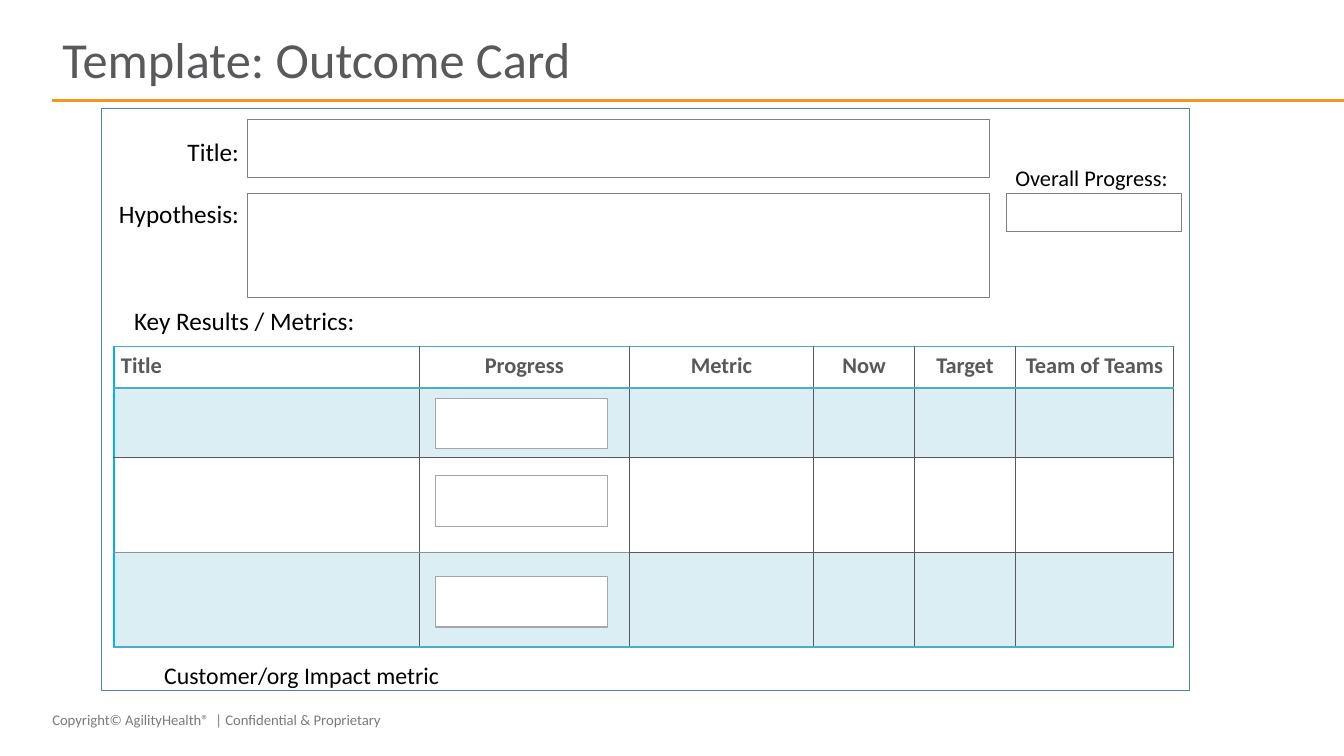
from dataclasses import dataclass

from lxml import etree
from pptx import Presentation
from pptx import util as u
from pptx.dml import color
from pptx.enum import shapes, text
from pptx.oxml import ns

WIDTH, HEIGHT = u.Inches(13.33), u.Inches(7.5)


@dataclass(frozen=True)
class Theme:
    font: str = "Calibri"
    heading: str = "58595B"
    ink: str = "000000"
    muted: str = "7A7A7A"
    accent: str = "F7941C"
    paper: str = "FFFFFF"
    card: str = "4B7EBC"
    field: str = "808080"
    progress: str = "A6A6A6"
    teal: str = "4BACC6"
    sky: str = "00B0F0"
    grid: str = "595959"
    soft_grid: str = "8C929A"
    title_size: float = 36
    label_size: float = 18
    note_size: float = 17
    small_size: float = 16
    footer_size: float = 10.5


THEME = Theme()
ALIGN = text.PP_ALIGN


def rgb(value):
    return color.RGBColor.from_string(value)


def area(left, top, width, height):
    """Turn percentages of the slide's size into lengths."""
    return [int(share * side / 100) for share, side in
            ((left, WIDTH), (top, HEIGHT), (width, WIDTH), (height, HEIGHT))]


def write(frame, words, size, ink, align=ALIGN.LEFT, bold=False):
    frame.text = words
    para = frame.paragraphs[0]
    para.alignment = align
    for span in para.runs:
        span.font.name = THEME.font
        span.font.size = u.Pt(size)
        span.font.bold = bold
        span.font.color.rgb = rgb(ink)
    return para


def add_title(page, words, *place):
    title = page.shapes.title
    title.left, title.top, title.width, title.height = area(*place)
    frame = title.text_frame
    frame.auto_size = text.MSO_AUTO_SIZE.NONE
    frame.vertical_anchor = text.MSO_ANCHOR.MIDDLE
    para = write(frame, words, THEME.title_size, THEME.heading)
    para.line_spacing = 0.9


def add_label(page, words, place, size=THEME.label_size, ink=THEME.ink,
              align=ALIGN.LEFT, wrap=True, inset=0.09):
    frame = page.shapes.add_textbox(*area(*place)).text_frame
    frame.word_wrap = wrap
    frame.auto_size = text.MSO_AUTO_SIZE.SHAPE_TO_FIT_TEXT
    frame.margin_left = frame.margin_right = u.Inches(inset)
    frame.margin_top = frame.margin_bottom = u.Inches(inset / 2)
    write(frame, words, size, ink, align)


def add_box(page, place, line, fill=None):
    box = page.shapes.add_shape(shapes.MSO_SHAPE.RECTANGLE, *area(*place))
    box.shadow.inherit = False
    box.line.color.rgb = rgb(line)
    box.line.width = u.Pt(0.75)
    if fill:
        box.fill.solid()
        box.fill.fore_color.rgb = rgb(fill)
    else:
        box.fill.background()


def add_rule(page, left, top, right):
    x1, y, x2, _ = area(left, top, right, 0)
    rule = page.shapes.add_connector(shapes.MSO_CONNECTOR.STRAIGHT, x1, y, x2, y)
    rule.line.color.rgb = rgb(THEME.accent)
    rule.line.width = u.Pt(2)
    etree.SubElement(rule._element.spPr, ns.qn("a:effectLst"))


def set_borders(cell, **sides):
    props = cell._tc.get_or_add_tcPr()
    for side, ink in sides.items():
        line = etree.SubElement(props, ns.qn(f"a:ln{side}"), w=str(u.Pt(1)))
        fill = etree.SubElement(line, ns.qn("a:solidFill"))
        etree.SubElement(fill, ns.qn("a:srgbClr"), val=ink)


def tint(cell):
    cell.fill.solid()
    cell.fill.fore_color.rgb = rgb(THEME.teal)
    swatch = cell._tc.tcPr.find(".//" + ns.qn("a:solidFill") + "/" + ns.qn("a:srgbClr")
                                + "[@val='" + THEME.teal + "'][last()]")
    swatch = cell._tc.tcPr.find(ns.qn("a:solidFill"))[0]
    etree.SubElement(swatch, ns.qn("a:alpha"), val="20000")


def add_metrics_table(page, headings, column_widths, row_heights, place):
    rows, cols = len(row_heights), len(headings)
    table = page.shapes.add_table(rows, cols, *area(*place)).table
    table.first_row = table.horz_banding = False
    for column, width in zip(table.columns, column_widths):
        column.width = u.Inches(width)
    for row, height in zip(table.rows, row_heights):
        row.height = u.Inches(height)

    for r in range(rows):
        for c in range(cols):
            cell = table.cell(r, c)
            cell.margin_left = cell.margin_right = u.Inches(0.07)
            # Horizontal rules from the top edge down to the bottom edge
            inner = THEME.soft_grid if c < 2 else THEME.grid
            rules = [THEME.teal, THEME.teal, THEME.grid, inner, THEME.teal]
            set_borders(cell, L=THEME.grid if c else THEME.sky, R=THEME.grid,
                        T=rules[r], B=rules[r + 1])
            if r % 2:
                tint(cell)
            else:
                cell.fill.background()
            if r == 0:
                write(cell.text_frame, headings[c], THEME.small_size, THEME.heading,
                      ALIGN.CENTER if c else ALIGN.LEFT, bold=True)


def main():
    deck = Presentation()
    deck.slide_width, deck.slide_height = WIDTH, HEIGHT
    page = deck.slides.add_slide(deck.slide_layouts.get_by_name("Title Only"))

    # Footer, heading rule and title
    add_label(page, "Copyright© AgilityHealth®  | Confidential & Proprietary",
              (3.15, 93.33, 33.76, 3.73), THEME.footer_size, THEME.muted, inset=0.1)
    add_rule(page, 3.9, 13.33, 100)
    add_title(page, "Template: Outcome Card", 3.9, 3.6, 92.2, 9.33)

    # Card outline
    add_box(page, (7.58, 14.4, 80.95, 76.93), THEME.card)

    # Title and hypothesis fields
    for words, label_top, field_top, field_height in (
            ("Title:", 17.47, 15.87, 7.6), ("Hypothesis:", 25.6, 25.6, 13.73)):
        add_label(page, words, (8.03, label_top, 10.43, 5.2), align=ALIGN.RIGHT)
        add_box(page, (18.45, field_top, 55.21, field_height), THEME.field)

    # Overall progress
    add_label(page, "Overall Progress:", (74.87, 21.07, 13.65, 4.93), THEME.small_size)
    add_box(page, (74.87, 25.6, 13.05, 5.07), THEME.field, THEME.paper)

    # Key results
    add_label(page, "Key Results / Metrics:", (9.3, 39.73, 24.46, 5.2))
    add_metrics_table(
        page, ["Title", "Progress", "Metric", "Now", "Target", "Team of Teams"],
        [3.03, 2.08, 1.83, 1, 1, 1.57], [0.41, 0.69, 0.94, 0.94],
        (8.48, 45.87, 78.92, 39.87))
    for top in (52.67, 62.93, 76.27):
        add_box(page, (32.41, top, 12.83, 6.67), THEME.progress, THEME.paper)

    # Impact note
    add_label(page, "Customer/org Impact metric", (11.48, 86.67, 22.21, 5.2),
              THEME.note_size, wrap=False, inset=0.1)

    deck.save("out.pptx")


if __name__ == "__main__":
    main()
